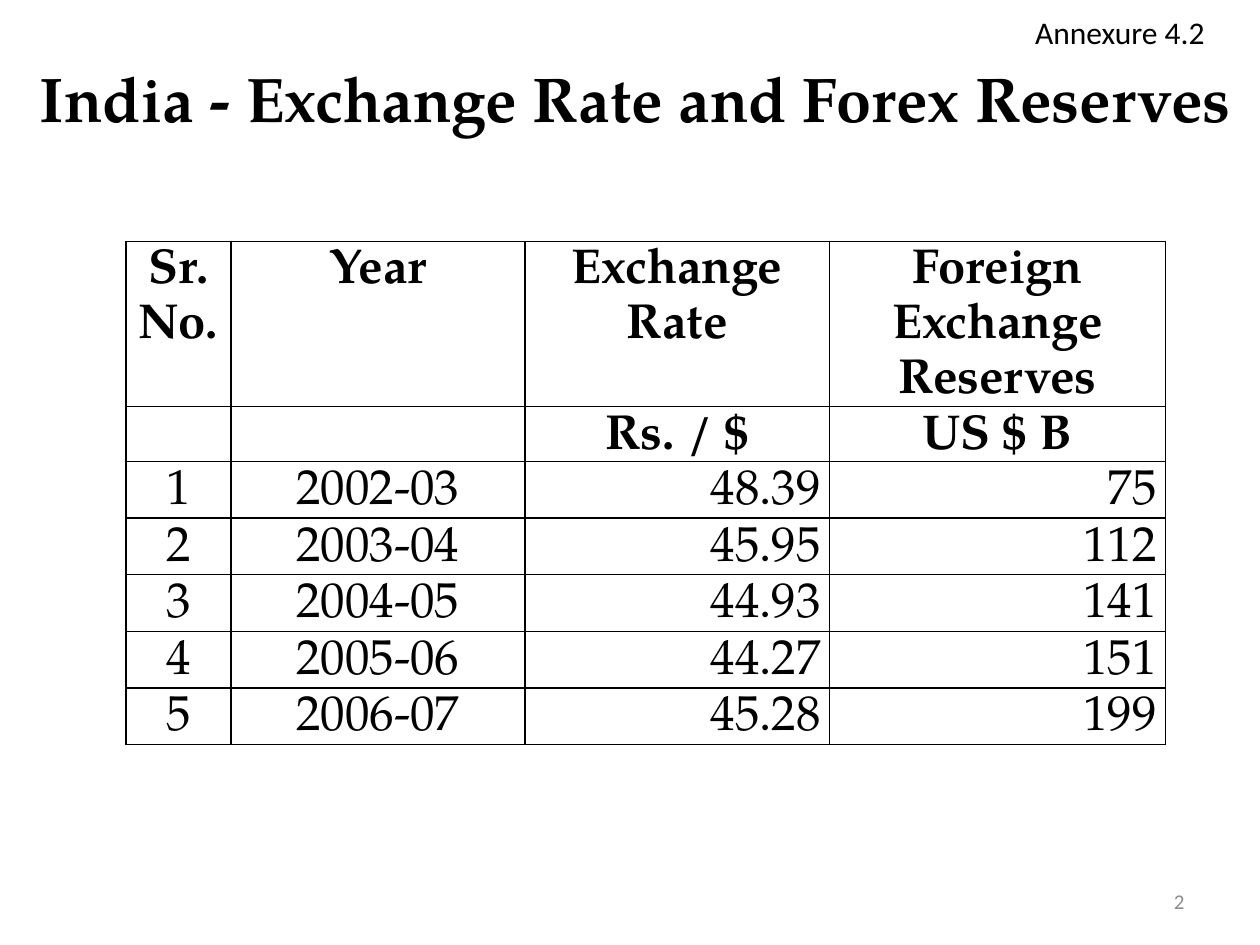
from pptx import Presentation
from pptx.dml.color import RGBColor
from pptx.enum.shapes import MSO_SHAPE as Preset
from pptx.enum.text import MSO_ANCHOR as Anchor, PP_ALIGN as Align
from pptx.oxml.ns import qn
from pptx.util import Pt
from lxml.etree import SubElement

BLACK = RGBColor(0x00, 0x00, 0x00)
WHITE = RGBColor(0xFF, 0xFF, 0xFF)
GRAY = RGBColor(0x8C, 0x8C, 0x8C)
SERIF = "TeX Gyre Pagella"
SANS = "Calibri"

HEADINGS = ["Sr. No.", "Year", "Exchange Rate", "Foreign Exchange Reserves"]
UNITS = ["", "", "Rs. / $", "US $ B"]
RECORDS = [
    ["1", "2002-03", "48.39", "75"],
    ["2", "2003-04", "45.95", "112"],
    ["3", "2004-05", "44.93", "141"],
    ["4", "2005-06", "44.27", "151"],
    ["5", "2006-07", "45.28", "199"],
]
COLUMN_WIDTHS = [60, 168, 174, 192]
HEADER_HEIGHT, ROW_HEIGHT = 54, 20


def write_text(frame, text, *, size, font=SERIF, color=BLACK, bold=False,
               align=Align.CENTER, spacing=None):
    paragraph = frame.paragraphs[0]
    paragraph.alignment = align
    paragraph.line_spacing = spacing
    run = paragraph.add_run()
    run.text = text
    run.font.size = Pt(size)
    run.font.name = font
    run.font.bold = bold
    run.font.color.rgb = color


class SlideBuilder:
    def __init__(self, slide):
        self.slide = slide

    def title(self, text, left, top, width, height):
        shape = self.slide.shapes.title
        shape.left, shape.top = Pt(left), Pt(top)
        shape.width, shape.height = Pt(width), Pt(height)
        shape.text_frame.vertical_anchor = Anchor.MIDDLE
        write_text(shape.text_frame, text, size=36, bold=True)

    def text_box(self, text, left, top, width, height, **style):
        shape = self.slide.shapes.add_textbox(Pt(left), Pt(top), Pt(width), Pt(height))
        shape.text_frame.word_wrap = True
        shape.text_frame.vertical_anchor = Anchor.MIDDLE
        write_text(shape.text_frame, text, **style)

    def label_box(self, text, left, top, width, height, **style):
        shape = self.slide.shapes.add_shape(
            Preset.RECTANGLE, Pt(left), Pt(top), Pt(width), Pt(height))
        shape.shadow.inherit = False
        shape.fill.solid()
        shape.fill.fore_color.rgb = WHITE
        shape.line.color.rgb = WHITE
        shape.line.width = Pt(2)
        shape.text_frame.vertical_anchor = Anchor.MIDDLE
        write_text(shape.text_frame, text, **style)

    def borders(self, cell):
        properties = cell._tc.get_or_add_tcPr()
        for side in ("a:lnL", "a:lnR", "a:lnT", "a:lnB"):
            line = SubElement(properties, qn(side), w=str(Pt(1)))
            fill = SubElement(line, qn("a:solidFill"))
            SubElement(fill, qn("a:srgbClr"), val=str(BLACK))

    def cell(self, cell, text, *, anchor, bold, align):
        self.borders(cell)
        cell.fill.background()
        if not text:
            return
        cell.margin_left = cell.margin_right = Pt(5)
        cell.margin_top = cell.margin_bottom = 0
        cell.vertical_anchor = anchor
        write_text(cell.text_frame, text, size=28, bold=bold, align=align, spacing=1.15)

    def table(self, rows, left, top):
        height = HEADER_HEIGHT + ROW_HEIGHT * (len(rows) - 1)
        table = self.slide.shapes.add_table(
            len(rows), len(COLUMN_WIDTHS), Pt(left), Pt(top),
            Pt(sum(COLUMN_WIDTHS)), Pt(height)).table
        table.first_row = table.horz_banding = False
        for column, width in zip(table.columns, COLUMN_WIDTHS):
            column.width = Pt(width)
        for i, values in enumerate(rows):
            table.rows[i].height = Pt(ROW_HEIGHT if i else HEADER_HEIGHT)
            is_heading = i < 2
            for j, value in enumerate(values):
                is_figure = j >= 2 and not is_heading
                self.cell(table.cell(i, j), value, bold=is_heading,
                          anchor=Anchor.BOTTOM if i else Anchor.TOP,
                          align=Align.RIGHT if is_figure else Align.CENTER)


def main():
    presentation = Presentation()
    presentation.slide_width, presentation.slide_height = Pt(720), Pt(540)
    title_only = presentation.slide_layouts[5]
    builder = SlideBuilder(presentation.slides.add_slide(title_only))

    # Title and table
    builder.title("India - Exchange Rate and Forex Reserves", 12, 24, 702, 63)
    builder.table([HEADINGS, UNITS, *RECORDS], 72, 138)

    # Page number and annexure label
    builder.text_box("2", 516, 500.5, 168, 28.75, size=12, font=SANS,
                     color=GRAY, align=Align.RIGHT)
    builder.label_box("Annexure 4.2", 575, 0, 130, 36, size=18, font=SANS)

    presentation.save("out.pptx")


if __name__ == "__main__":
    main()
